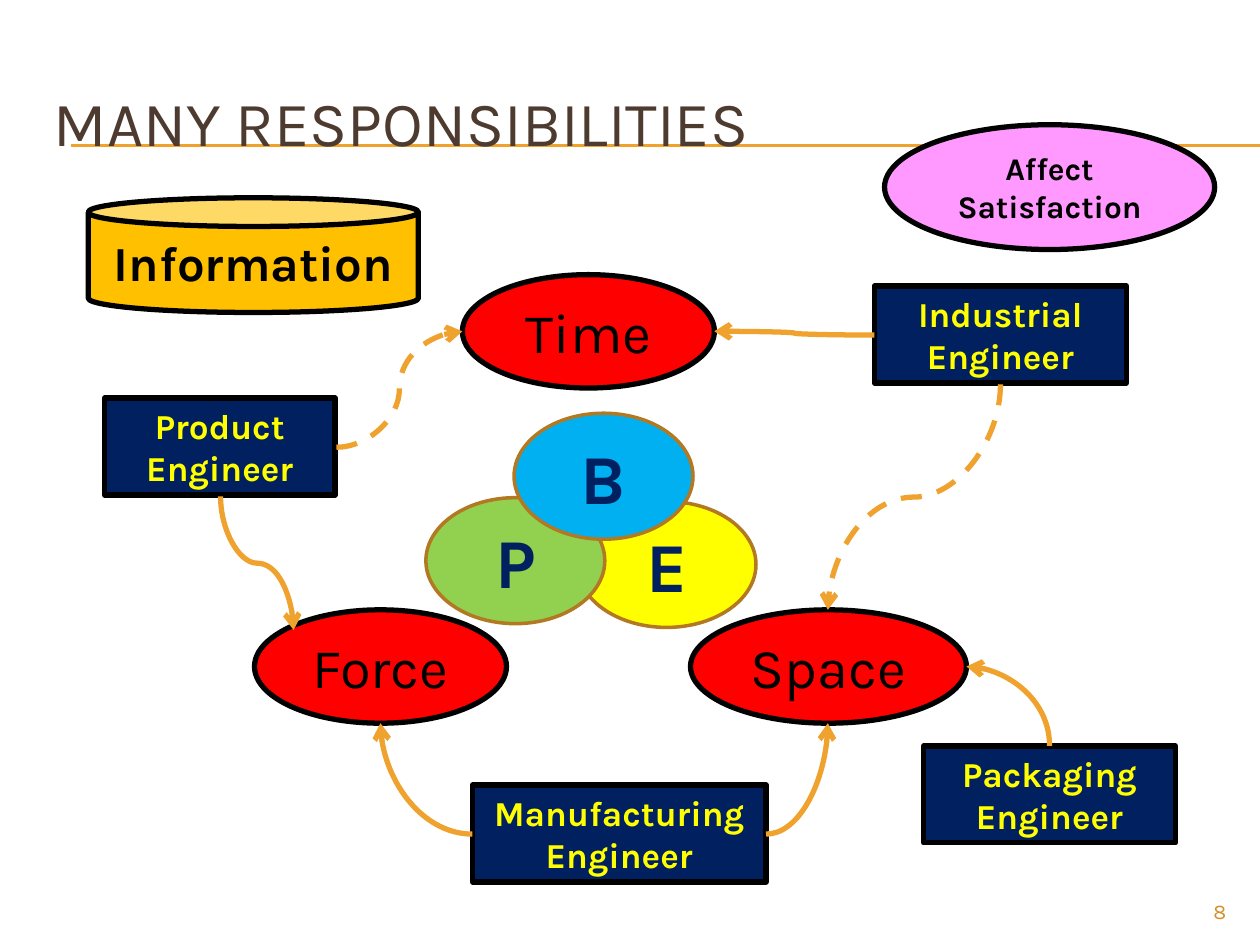
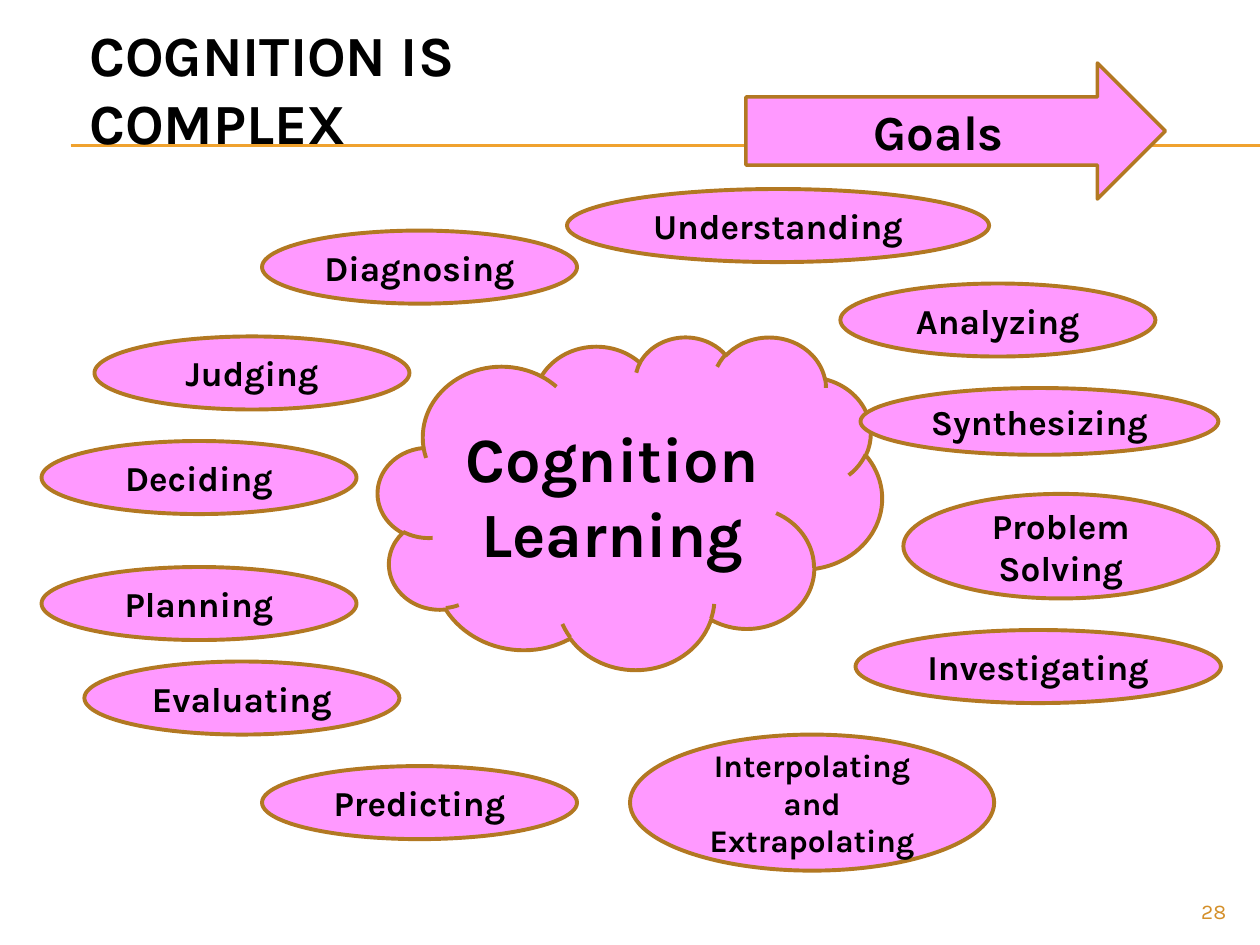
from lxml import etree
from pptx import Presentation
from pptx.dml.color import RGBColor
from pptx.enum.dml import MSO_LINE
from pptx.enum.shapes import MSO_CONNECTOR, MSO_SHAPE
from pptx.enum.text import MSO_ANCHOR, PP_ALIGN
from pptx.oxml.ns import qn
from pptx.util import Inches, Pt

FONT = "Karla"
BLACK = RGBColor(0x00, 0x00, 0x00)
BROWN = RGBColor(0x4E, 0x3B, 0x30)
ORANGE = RGBColor(0xF0, 0xA2, 0x2E)
PAGE_ORANGE = RGBColor(0xD4, 0x8F, 0x29)
BRONZE = RGBColor(0xB2, 0x78, 0x22)
RED = RGBColor(0xFF, 0x00, 0x00)
NAVY = RGBColor(0x00, 0x20, 0x60)
YELLOW = RGBColor(0xFF, 0xFF, 0x00)
GREEN = RGBColor(0x92, 0xD0, 0x50)
BLUE = RGBColor(0x00, 0xB0, 0xF0)
GOLD = RGBColor(0xFF, 0xC0, 0x00)
PINK = RGBColor(0xFF, 0x99, 0xFF)

ELLIPSE, RECT, CAN = MSO_SHAPE.OVAL, MSO_SHAPE.RECTANGLE, MSO_SHAPE.CAN
CLOUD, ARROW = MSO_SHAPE.CLOUD, MSO_SHAPE.RIGHT_ARROW
STRAIGHT, CURVE = MSO_CONNECTOR.STRAIGHT, MSO_CONNECTOR.CURVE
DASH = MSO_LINE.DASH
TOP, MIDDLE = MSO_ANCHOR.TOP, MSO_ANCHOR.MIDDLE
LEFT, CENTER, RIGHT = PP_ALIGN.LEFT, PP_ALIGN.CENTER, PP_ALIGN.RIGHT

RULE_LEFT, RULE_RIGHT, RULE_TOPS = 0.56, 10, (1.15, 1.16)
PAGE_BOX = (9, 7.08, 0.83, 0.27)

# Slide 1: (text, left, top, width)
FACTORS = [("Force", 2.02, 4.84, 2), ("Space", 5.48, 4.84, 2.19), ("Time", 3.67, 2.18, 2)]
FACTOR_HEIGHT = 0.9
ENGINEERS = [
    ("Product Engineer", 0.83, 3.16, 1.83),
    ("Packaging Engineer", 7.33, 5.92, 2),
    ("Manufacturing Engineer", 3.75, 6.23, 2.33),
    ("Industrial Engineer", 6.94, 2.27, 2),
]
ENGINEER_HEIGHT = 0.77
# start, end, leaves vertically, turns once, dashed
LINKS = [
    ((1.75, 3.94), (2.33, 5), True, False, False),
    ((2.67, 3.55), (3.67, 2.63), False, False, True),
    ((6.08, 6.62), (6.57, 5.74), False, True, False),
    ((8.33, 5.92), (7.67, 5.29), True, True, False),
    ((6.94, 2.66), (5.67, 2.63), False, False, False),
    ((3.75, 6.62), (3.02, 5.74), False, True, False),
    ((7.94, 3.05), (6.57, 4.84), True, False, True),
]
VENN = [("E", 4.58, 3.98, YELLOW), ("P", 3.38, 3.95, GREEN), ("B", 4.08, 3.28, BLUE)]
VENN_SIZE = (1.42, 1)

# Slide 2: (text, left, top, width, height, size)
STEP = (2.5, 0.58, 20)
SKILLS = [
    ("Evaluating", 0.67, 5.25, *STEP),
    ("Diagnosing", 2.08, 1.83, *STEP),
    ("Judging", 0.75, 2.67, *STEP),
    ("Deciding", 0.33, 3.5, *STEP),
    ("Planning", 0.33, 4.5, *STEP),
    ("Investigating", 6.79, 5, 2.9, 0.58, 20),
    ("Predicting", 2.08, 6.08, *STEP),
    ("Analyzing", 6.67, 2.25, *STEP),
    ("Problem Solving", 7.17, 3.92, 2.5, 0.83, 20),
    ("Interpolating and Extrapolating", 5, 5.83, 2.89, 1.08, 18),
    ("Understanding", 4.5, 1.5, 3.35, 0.58, 20),
    ("Synthesizing", 6.83, 3.08, 2.84, 0.53, 20),
]


def write(sp, paragraphs, size, color, bold=False, align=CENTER, anchor=MIDDLE):
    """Fill a shape with paragraphs, each a list of lines."""
    tf = sp.text_frame
    tf.word_wrap = True
    tf.vertical_anchor = anchor
    for i, lines in enumerate(paragraphs):
        p = tf.paragraphs[0] if i == 0 else tf.add_paragraph()
        p.alignment = align
        for j, line in enumerate(lines):
            if j:
                p.add_line_break()
            r = p.add_run()
            r.text = line
            r.font.name, r.font.size, r.font.bold = FONT, Pt(size), bold
            r.font.color.rgb = color


def add_text(s, box, lines, size, color, **style):
    write(s.shapes.add_textbox(*map(Inches, box)), [lines], size, color, **style)


def add_shape(s, kind, box, paragraphs, size, fill, line, width, color=BLACK, bold=True, anchor=MIDDLE):
    sp = s.shapes.add_shape(kind, *map(Inches, box))
    sp.shadow.inherit = False
    sp.fill.solid()
    sp.fill.fore_color.rgb = fill
    sp.line.color.rgb = line
    sp.line.width = Pt(width)
    write(sp, [[text] for text in paragraphs], size, color, bold, anchor=anchor)


def add_line(s, kind, start, end, width):
    c = s.shapes.add_connector(kind, *map(Inches, (*start, *end)))
    c.line.color.rgb = ORANGE
    c.line.width = Pt(width)
    etree.SubElement(c._element.spPr, qn("a:effectLst"))
    return c


def add_link(s, start, end, vertical, one_turn, dashed):
    """Curved arrow; one that leaves vertically is a horizontal curve turned a quarter."""
    (x1, y1), (x2, y2) = start, end
    if vertical:
        down, leftward = y2 > y1, x2 < x1
        cx, cy = (x1 + x2) / 2, (y1 + y2) / 2
        dx, dy = abs(y2 - y1) / 2, abs(x2 - x1) / 2
        if down and not leftward:
            dx = -dx
        if leftward and not down:
            dy = -dy
        start, end = (cx - dx, cy - dy), (cx + dx, cy + dy)
    c = add_line(s, CURVE, start, end, 3)
    sp_pr = c._element.spPr
    if vertical:
        degrees = 90 if down and leftward else 270
        sp_pr.find(qn("a:xfrm")).set("rot", str(degrees * 60000))
    if one_turn:
        sp_pr.find(qn("a:prstGeom")).set("prst", "curvedConnector2")
    if dashed:
        c.line.dash_style = DASH
    etree.SubElement(sp_pr.find(qn("a:ln")), qn("a:tailEnd"), type="arrow")


def add_base(prs, title_lines, title_box, size, color, bold, page):
    s = prs.slides.add_slide(prs.slide_layouts[6])
    for y in RULE_TOPS:
        add_line(s, STRAIGHT, (RULE_LEFT, y), (RULE_RIGHT, y), 0.75)
    add_text(s, title_box, title_lines, size, color, bold=bold, align=LEFT)
    add_text(s, PAGE_BOX, [page], 12, PAGE_ORANGE, align=RIGHT, anchor=TOP)
    return s


def build_responsibilities(prs):
    s = add_base(prs, ["MANY RESPONSIBILITIES"], (0.33, 0.5, 9.5, 0.92), 36, BROWN, False, "8")
    for text, x, y, w in FACTORS:
        add_shape(s, ELLIPSE, (x, y, w, FACTOR_HEIGHT), [text], 32, RED, BLACK, 3, bold=False, anchor=TOP)
    for text, x, y, w in ENGINEERS:
        add_shape(s, RECT, (x, y, w, ENGINEER_HEIGHT), [text], 20, NAVY, BLACK, 3, YELLOW, anchor=TOP)
    for link in LINKS:
        add_link(s, *link)
    for letter, x, y, fill in VENN:
        add_shape(s, ELLIPSE, (x, y, *VENN_SIZE), [letter], 40, fill, BRONZE, 2, NAVY)
    add_shape(s, CAN, (0.7, 1.57, 2.62, 0.91), ["Information"], 28, GOLD, BLACK, 3, anchor=TOP)
    add_shape(s, ELLIPSE, (7.02, 0.99, 2.62, 0.99), ["Affect", "Satisfaction"], 18, PINK, BLACK, 3, anchor=TOP)


def build_cognition(prs):
    s = add_base(prs, ["COGNITION IS", "COMPLEX"], (0.61, 0.4, 5.23, 0.6), 32.4, BLACK, True, "28")
    add_shape(s, CLOUD, (3, 2.67, 4, 2.64), ["Cognition", "Learning"], 36, PINK, BRONZE, 2.25)
    add_shape(s, ARROW, (5.92, 0.5, 3.33, 1.08), ["Goals"], 28, PINK, BRONZE, 2)
    for text, *box, size in SKILLS:
        add_shape(s, ELLIPSE, box, [text], size, PINK, BRONZE, 2.25)


def main():
    prs = Presentation()
    prs.slide_width, prs.slide_height = Inches(10), Inches(7.5)
    build_responsibilities(prs)
    build_cognition(prs)
    prs.save("out.pptx")


if __name__ == "__main__":
    main()
